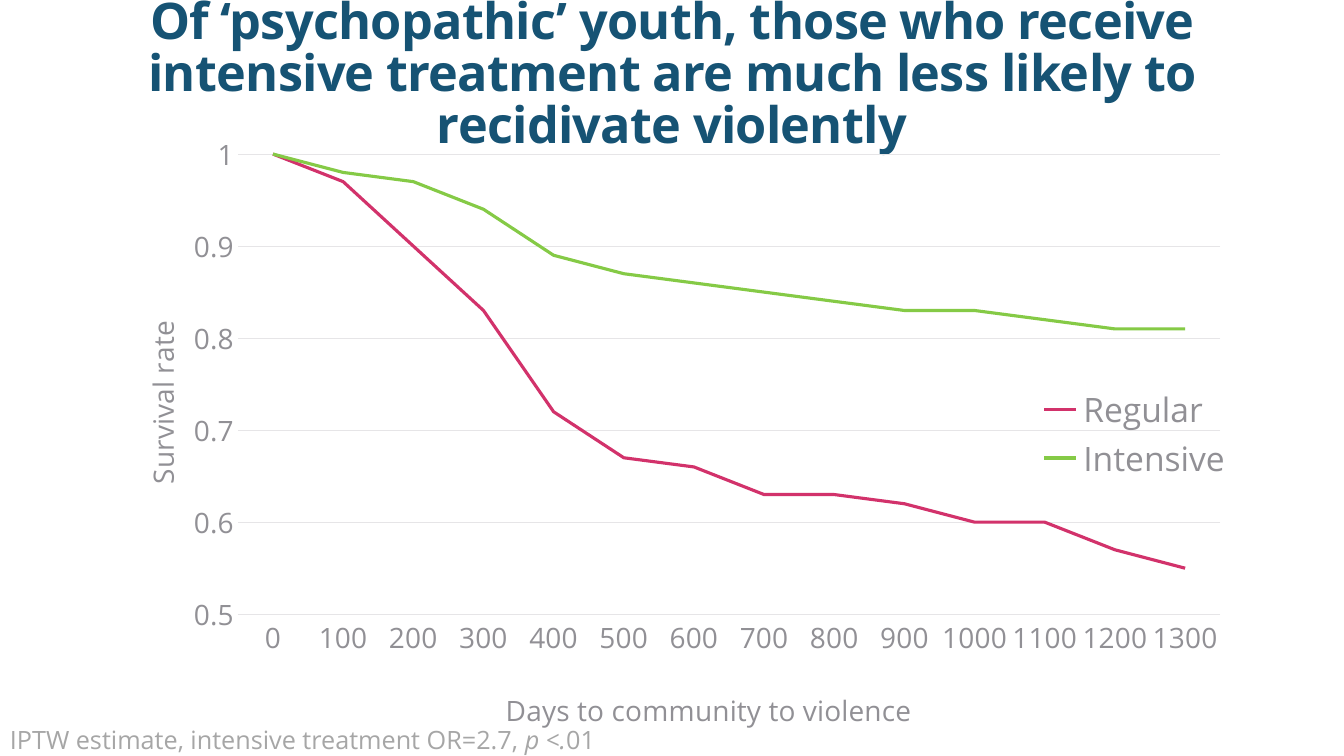
from dataclasses import dataclass

from lxml import etree
from pptx import Presentation
from pptx.chart.data import CategoryChartData
from pptx.dml.color import RGBColor
from pptx.enum.chart import XL_CHART_TYPE, XL_LEGEND_POSITION, XL_TICK_MARK
from pptx.enum.text import MSO_ANCHOR, PP_ALIGN
from pptx.oxml.ns import qn
from pptx.util import Inches, Pt

LINE_CHART = XL_CHART_TYPE.LINE
LEGEND_RIGHT = XL_LEGEND_POSITION.RIGHT
NO_TICK = XL_TICK_MARK.NONE
MIDDLE = MSO_ANCHOR.MIDDLE
CENTER = PP_ALIGN.CENTER


@dataclass(frozen=True)
class Theme:
    font: str = "Open Sans"
    title_color: str = "165374"
    axis_color: str = "919095"
    grid_color: str = "E6E5E7"
    note_color: str = "A6A6A6"
    regular_color: str = "D2326B"
    intensive_color: str = "85CA46"
    title_size: int = 36
    legend_size: int = 24
    axis_size: int = 20
    note_size: int = 18
    grid_width: float = 0.75
    series_width: float = 2.25


THEME = Theme()

TITLE = ("Of ‘psychopathic’ youth, those who receive intensive treatment "
         "are much less likely to recidivate violently")
DAYS = [str(day) for day in range(0, 1301, 100)]
SURVIVAL = [
    ("Regular", THEME.regular_color,
     [1, 0.97, 0.9, 0.83, 0.72, 0.67, 0.66, 0.63, 0.63, 0.62, 0.6, 0.6, 0.57, 0.55]),
    ("Intensive", THEME.intensive_color,
     [1, 0.98, 0.97, 0.94, 0.89, 0.87, 0.86, 0.85, 0.84, 0.83, 0.83, 0.82, 0.81, 0.81]),
]
NOTE_RUNS = [("IPTW estimate, intensive treatment OR=2.7, ", False),
             ("p <.", True), ("01", False)]


def style_font(font, size, color, bold=False, italic=False):
    font.name = THEME.font
    font.size = Pt(size)
    font.bold = bold
    font.italic = italic
    font.color.rgb = RGBColor.from_string(color)


def style_line(line, color, width):
    line.color.rgb = RGBColor.from_string(color)
    line.width = Pt(width)


def place_chart_part(element, index, inner=False, **fractions):
    """Fix a chart part at fractions (x, y, w, h) of the chart area."""
    for old_layout in element.findall(qn("c:layout")):
        element.remove(old_layout)
    layout = etree.Element(qn("c:layout"))
    manual = etree.SubElement(layout, qn("c:manualLayout"))
    settings = [("layoutTarget", "inner")] if inner else []
    settings += [("xMode", "edge"), ("yMode", "edge"), *fractions.items()]
    for name, value in settings:
        etree.SubElement(manual, qn(f"c:{name}")).set("val", str(value))
    element.insert(index, layout)


def add_text_box(slide, box):
    text_frame = slide.shapes.add_textbox(*map(Inches, box)).text_frame
    text_frame.word_wrap = True
    return text_frame


def add_title(slide, box):
    text_frame = add_text_box(slide, box)
    text_frame.vertical_anchor = MIDDLE
    text_frame.margin_left = text_frame.margin_right = 0
    text_frame.margin_top = text_frame.margin_bottom = 0
    text_frame.text = TITLE
    paragraph = text_frame.paragraphs[0]
    paragraph.alignment = CENTER
    paragraph.line_spacing = 0.86
    font = paragraph.runs[0].font
    style_font(font, THEME.title_size, THEME.title_color, bold=True)
    paragraph.runs[0]._r.get_or_add_rPr().set("spc", "-50")


def style_axis(axis, title, x, y):
    axis.major_tick_mark = axis.minor_tick_mark = NO_TICK
    style_font(axis.tick_labels.font, THEME.axis_size, THEME.axis_color)
    text_frame = axis.axis_title.text_frame
    text_frame.text = title
    style_font(text_frame.paragraphs[0].runs[0].font, THEME.axis_size, THEME.axis_color)
    place_chart_part(axis.axis_title._element, 1, x=x, y=y)


def add_survival_chart(slide, box):
    chart_data = CategoryChartData()
    chart_data.categories = DAYS
    for name, _, rates in SURVIVAL:
        chart_data.add_series(name, rates)
    chart = slide.shapes.add_chart(LINE_CHART, *map(Inches, box), chart_data).chart
    chart.has_title = False
    style_font(chart.font, THEME.axis_size, THEME.axis_color)
    place_chart_part(chart._chartSpace.chart.plotArea, 0, inner=True,
                     x=0.12, y=0.05, w=0.86, h=0.74)

    # Series
    plot = chart.plots[0]
    plot.vary_by_categories = False
    for series, (_, color, _) in zip(plot.series, SURVIVAL):
        series.smooth = False
        style_line(series.format.line, color, THEME.series_width)

    # Axes
    days_axis, rate_axis = chart.category_axis, chart.value_axis
    style_axis(days_axis, "Days to community to violence", x=0.35, y=0.9)
    style_axis(rate_axis, "Survival rate", x=0.03, y=0.31)
    style_line(days_axis.format.line, THEME.grid_color, THEME.grid_width)
    rate_axis.format.line.fill.background()
    rate_axis.minimum_scale, rate_axis.maximum_scale = 0.5, 1
    rate_axis.major_unit = 0.1
    style_line(rate_axis.major_gridlines.format.line, THEME.grid_color, THEME.grid_width)

    # Legend over the plot
    chart.has_legend = True
    legend = chart.legend
    legend.position = LEGEND_RIGHT
    legend.include_in_layout = True
    style_font(legend.font, THEME.legend_size, THEME.axis_color)
    place_chart_part(legend._element, 1, x=0.82, y=0.42, w=0.17, h=0.16)


def add_note(slide, box):
    paragraph = add_text_box(slide, box).paragraphs[0]
    for text, italic in NOTE_RUNS:
        run = paragraph.add_run()
        run.text = text
        style_font(run.font, THEME.note_size, THEME.note_color, italic=italic)


def main():
    presentation = Presentation()
    presentation.slide_width = Inches(13.33)
    presentation.slide_height = Inches(7.5)
    slide = presentation.slides.add_slide(presentation.slide_layouts[6])
    add_title(slide, (1, 0.31, 11.33, 0.89))
    add_survival_chart(slide, (1, 1.22, 11.33, 6.17))
    add_note(slide, (0, 7.14, 7, 0.4))
    presentation.save("out.pptx")


if __name__ == "__main__":
    main()
